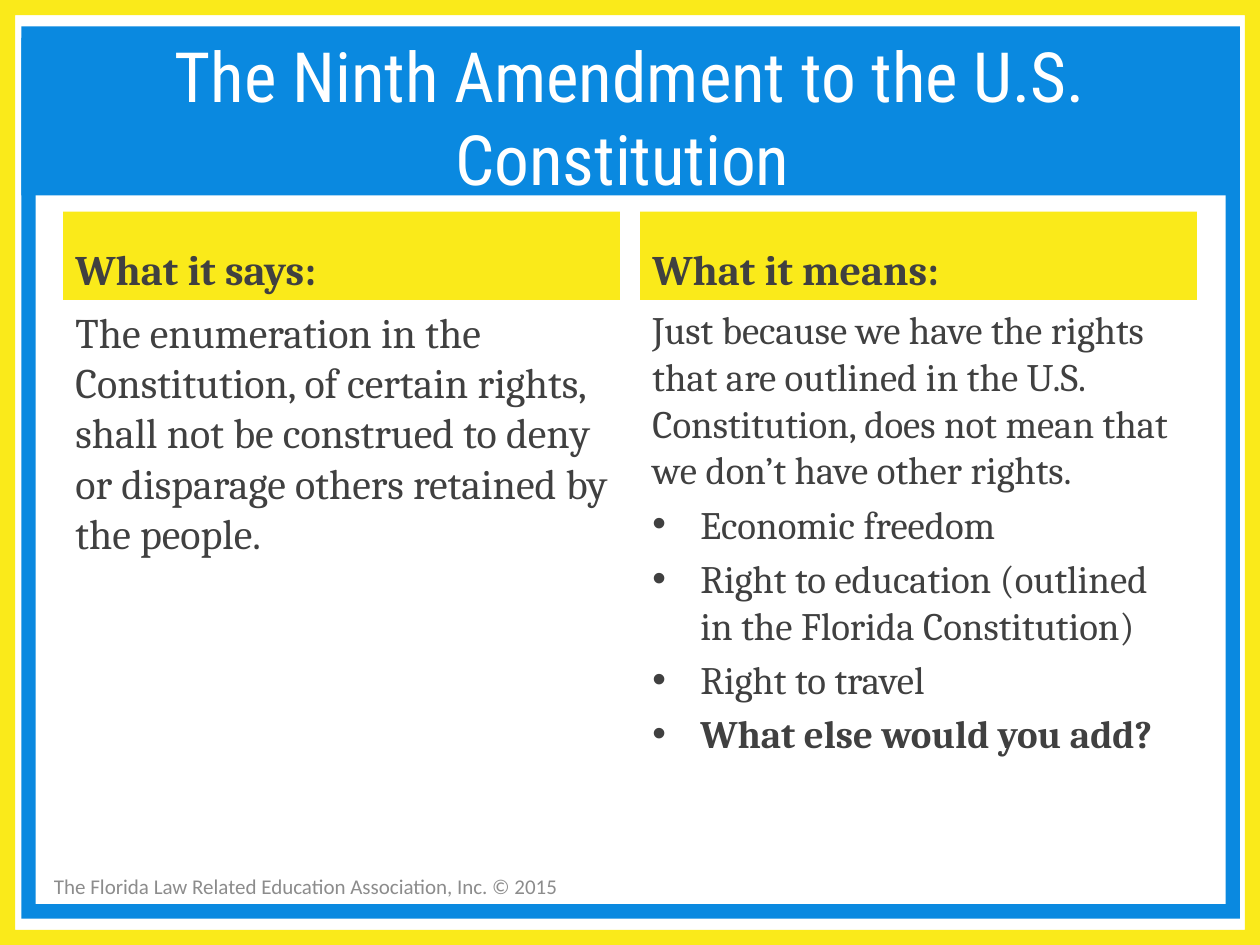
from dataclasses import dataclass

from lxml import etree
from pptx import Presentation
from pptx.dml.color import RGBColor
from pptx.enum.shapes import MSO_SHAPE
from pptx.enum.text import MSO_ANCHOR, PP_ALIGN
from pptx.oxml.ns import qn
from pptx.util import Inches, Pt

FRAME, RECT = MSO_SHAPE.FRAME, MSO_SHAPE.RECTANGLE
TOP, MIDDLE, BOTTOM = MSO_ANCHOR.TOP, MSO_ANCHOR.MIDDLE, MSO_ANCHOR.BOTTOM
LEFT, CENTER = PP_ALIGN.LEFT, PP_ALIGN.CENTER

COLORS = {"yellow": "FAEA1A", "blue": "0A89E0", "white": "FFFFFF",
          "dark": "404040", "gray": "8C8C8C"}
TITLE = {"name": "Roboto Condensed", "size": Pt(39.6), "color": "white"}
HEAD = {"name": "Cambria", "size": Pt(24), "bold": True, "color": "dark"}
BODY = {"name": "Cambria", "size": Pt(24), "color": "dark"}
SMALL = {**BODY, "size": Pt(22.2)}
NOTE = {"name": "Calibri", "size": Pt(12), "color": "gray"}


@dataclass
class Box:
    left: float
    top: float
    width: float
    height: float

    def emu(self) -> list:
        return [Inches(v) for v in (self.left, self.top, self.width, self.height)]


@dataclass
class Line:
    text: str
    bullet: bool = False
    bold: bool = False


@dataclass
class Column:
    left: float
    head: str
    lines: list
    style: dict


def add_block(slide, kind, box: Box, color: str):
    shape = slide.shapes.add_shape(kind, *box.emu())
    shape.shadow.inherit = False
    shape.fill.solid()
    shape.fill.fore_color.rgb = RGBColor.from_string(COLORS[color])
    shape.line.fill.background()
    if kind == FRAME:
        shape.adjustments[0] = 0.016
    return shape


def add_bullet(para) -> None:
    props = para._p.get_or_add_pPr()
    indent = Inches(0.38)
    props.set("marL", str(indent))
    props.set("indent", str(-indent))
    etree.SubElement(props, qn("a:buFont")).set("typeface", "Arial")
    etree.SubElement(props, qn("a:buChar")).set("char", "•")


def set_font(font, style: dict) -> None:
    for key, value in style.items():
        if key == "color":
            font.color.rgb = RGBColor.from_string(COLORS[value])
        else:
            setattr(font, key, value)


def write(shape, lines: list, style: dict, anchor=TOP, align=LEFT) -> None:
    frame = shape.text_frame
    frame.word_wrap = True
    frame.vertical_anchor = anchor
    for i, line in enumerate(lines):
        para = frame.add_paragraph() if i else frame.paragraphs[0]
        para.alignment = align
        if i:
            para.space_before = Pt(4.4)
        if line.bullet:
            add_bullet(para)
        run = para.add_run()
        run.text = line.text
        set_font(run.font, {**style, "bold": line.bold or style.get("bold", False)})


def add_text(slide, box: Box, lines: list, style: dict, anchor=TOP) -> None:
    write(slide.shapes.add_textbox(*box.emu()), lines, style, anchor)


def add_column(slide, col: Column) -> None:
    head = add_block(slide, RECT, Box(col.left, 1.68, 4.42, 0.7), "yellow")
    write(head, [Line(col.head)], HEAD, BOTTOM)
    add_text(slide, Box(col.left, 2.38, 4.42, 4.32), col.lines, col.style)


COLUMNS = [
    Column(0.5, "What it says:", [
        Line("The enumeration in the Constitution, of certain rights, shall not "
             "be construed to deny or disparage others retained by the people."),
    ], BODY),
    Column(5.08, "What it means:", [
        Line("Just because we have the rights that are outlined in the U.S. "
             "Constitution, does not mean that we don’t have other rights."),
        Line("Economic freedom", bullet=True),
        Line("Right to education (outlined in the Florida Constitution)", bullet=True),
        Line("Right to travel", bullet=True),
        Line("What else would you add?", bullet=True, bold=True),
    ], SMALL),
]


def main() -> None:
    deck = Presentation()
    deck.slide_width, deck.slide_height = Inches(10), Inches(7.5)
    slide = deck.slides.add_slide(deck.slide_layouts[6])

    # Footer and borders
    add_text(slide, Box(0.33, 6.83, 4.25, 0.4),
             [Line("The Florida Law Related Education Association, Inc. © 2015")],
             NOTE, MIDDLE)
    add_block(slide, FRAME, Box(0, 0, 10, 7.5), "yellow")
    add_block(slide, FRAME, Box(0.17, 0.21, 9.67, 7.08), "blue")

    # Title band
    band = add_block(slide, RECT, Box(0.17, 0.3, 9.67, 1.25), "blue")
    write(band, [Line("The Ninth Amendment to the U.S. Constitution ")],
          TITLE, MIDDLE, CENTER)

    # Text columns
    for col in COLUMNS:
        add_column(slide, col)

    deck.save("out.pptx")


if __name__ == "__main__":
    main()
